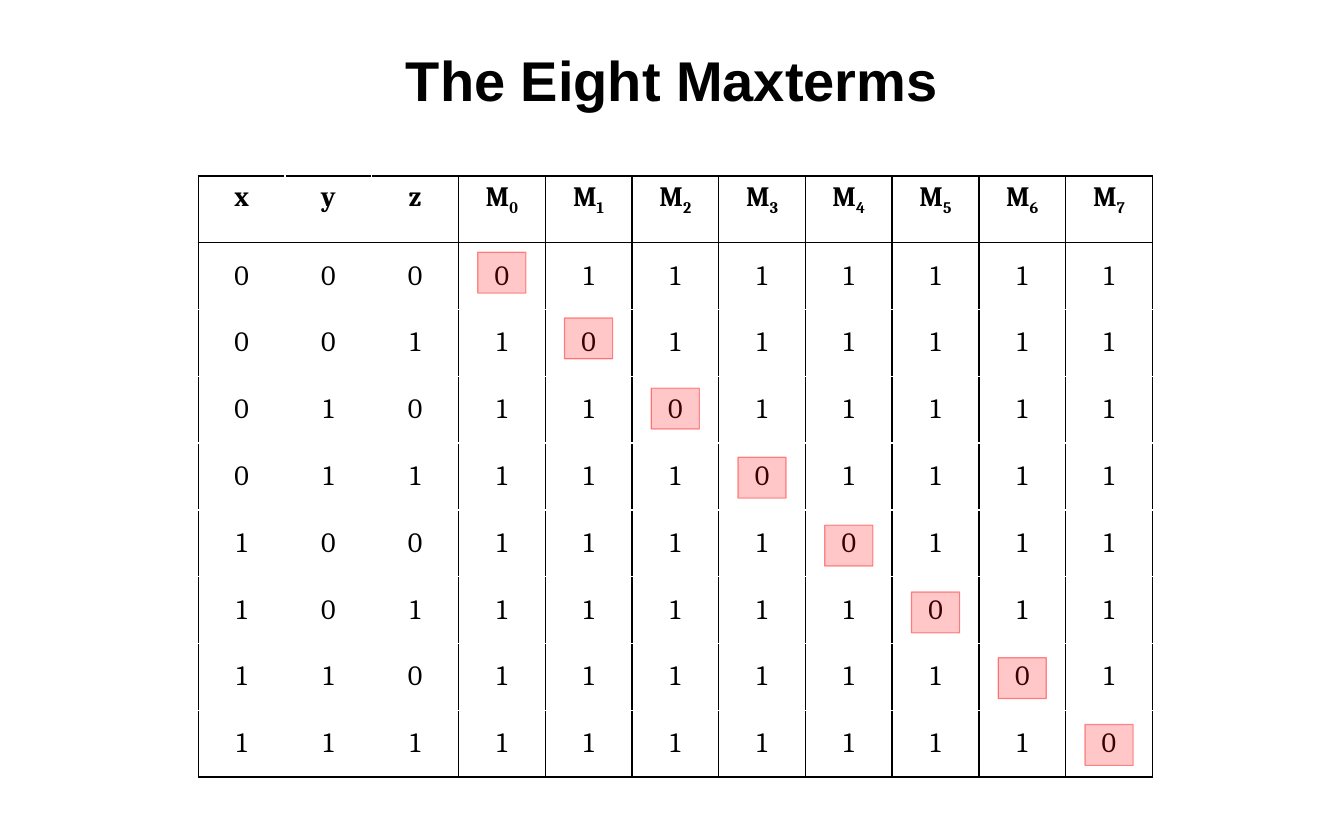
from itertools import product

from pptx import Presentation
from pptx.dml.color import RGBColor
from pptx.enum.shapes import MSO_SHAPE
from pptx.enum.text import MSO_ANCHOR, PP_ALIGN
from pptx.oxml.ns import qn
from pptx.util import Inches, Pt
from lxml.etree import SubElement

BLACK = RGBColor(0x00, 0x00, 0x00)
WHITE = RGBColor(0xFF, 0xFF, 0xFF)
RED = RGBColor(0xFF, 0x00, 0x00)

VARIABLES = "xyz"
TERMS = 2 ** len(VARIABLES)
ROWS = TERMS + 1
COLS = len(VARIABLES) + TERMS

TITLE_BOX = (0, 0.33, 12, 0.75)
TABLE_BOX = (1.77, 1.57, 8.52, 5.37)
MARK_SIZE = (0.43, 0.365)
# Shift of each mark from the middle of its row
MARK_SHIFTS = (-0.03, -0.04, -0.01, 0.01, 0.02, 0.02, 0.01, 0.01)


def add_run(p, text, font, size, bold=False):
    r = p.add_run()
    r.text = text
    r.font.name = font
    r.font.size = Pt(size)
    r.font.bold = bold
    r.font.color.rgb = BLACK
    return r


def add_title(slide, box, text):
    tf = slide.shapes.add_textbox(*map(Inches, box)).text_frame
    tf.word_wrap = True
    tf.vertical_anchor = MSO_ANCHOR.MIDDLE
    p = tf.paragraphs[0]
    p.alignment = PP_ALIGN.CENTER
    add_run(p, text, "Arial", 36, bold=True)


def set_borders(cell, row, col):
    """Black frame, header and column rules; white between body rows and variables."""
    def vertical(edge):
        return WHITE if 0 < edge < len(VARIABLES) else BLACK

    def horizontal(edge):
        return BLACK if edge in (0, 1, ROWS) else WHITE

    sides = {"a:lnL": vertical(col), "a:lnR": vertical(col + 1),
             "a:lnT": horizontal(row), "a:lnB": horizontal(row + 1)}
    tc_pr = cell._tc.get_or_add_tcPr()
    for tag, color in sides.items():
        ln = SubElement(tc_pr, qn(tag), w=str(Pt(1)))
        fill = SubElement(ln, qn("a:solidFill"))
        SubElement(fill, qn("a:srgbClr"), val=str(color))


def fill_cell(cell, row, col, text, subscript=""):
    header = row == 0
    set_borders(cell, row, col)
    if header:
        cell.fill.solid()
        cell.fill.fore_color.rgb = WHITE
    else:
        cell.fill.background()
    cell.vertical_anchor = MSO_ANCHOR.TOP if header else MSO_ANCHOR.MIDDLE
    p = cell.text_frame.paragraphs[0]
    p.alignment = PP_ALIGN.CENTER
    add_run(p, text, "Cambria", 18, bold=header)
    if subscript:
        r = add_run(p, subscript, "Cambria", 18, bold=header)
        r.font._element.set("baseline", "-25000")


def add_truth_table(slide, box):
    left, top, width, height = map(Inches, box)
    table = slide.shapes.add_table(ROWS, COLS, left, top, width, height).table
    table.first_row = table.horz_banding = False
    for column in table.columns:
        column.width = width // COLS
    for row in table.rows:
        row.height = height // ROWS

    header = [(name,) for name in VARIABLES]
    header += [("M", str(term)) for term in range(TERMS)]
    body = [[*bits, *("0" if term == i else "1" for term in range(TERMS))]
            for i, bits in enumerate(product("01", repeat=len(VARIABLES)))]
    for i, row in enumerate([header, *body]):
        for j, content in enumerate(row):
            fill_cell(table.cell(i, j), i, j, *content)


def set_alpha(color_format_parent, percent):
    for color in color_format_parent.iter(qn("a:srgbClr")):
        SubElement(color, qn("a:alpha"), val=str(percent * 1000))


def add_zero_marks(slide, box):
    """Mark the zero of each maxterm, down the table's diagonal."""
    left, top, width, height = box
    mark_w, mark_h = MARK_SIZE
    for term, shift in enumerate(MARK_SHIFTS):
        x = left + (len(VARIABLES) + term + 0.5) * width / COLS
        y = top + (term + 1.5) * height / ROWS + shift
        sp = slide.shapes.add_shape(
            MSO_SHAPE.RECTANGLE, Inches(x - mark_w / 2), Inches(y - mark_h / 2),
            Inches(mark_w), Inches(mark_h))
        sp.shadow.inherit = False
        sp.fill.solid()
        sp.fill.fore_color.rgb = RED
        set_alpha(sp._element.spPr, 22)
        sp.line.color.rgb = RED
        sp.line.width = Pt(0.75)
        set_alpha(sp.line._ln, 43)


def main():
    prs = Presentation()
    prs.slide_width, prs.slide_height = Inches(12), Inches(7.5)
    slide = prs.slides.add_slide(prs.slide_layouts[6])
    add_title(slide, TITLE_BOX, "The Eight Maxterms")
    add_truth_table(slide, TABLE_BOX)
    add_zero_marks(slide, TABLE_BOX)
    prs.save("out.pptx")


if __name__ == "__main__":
    main()
